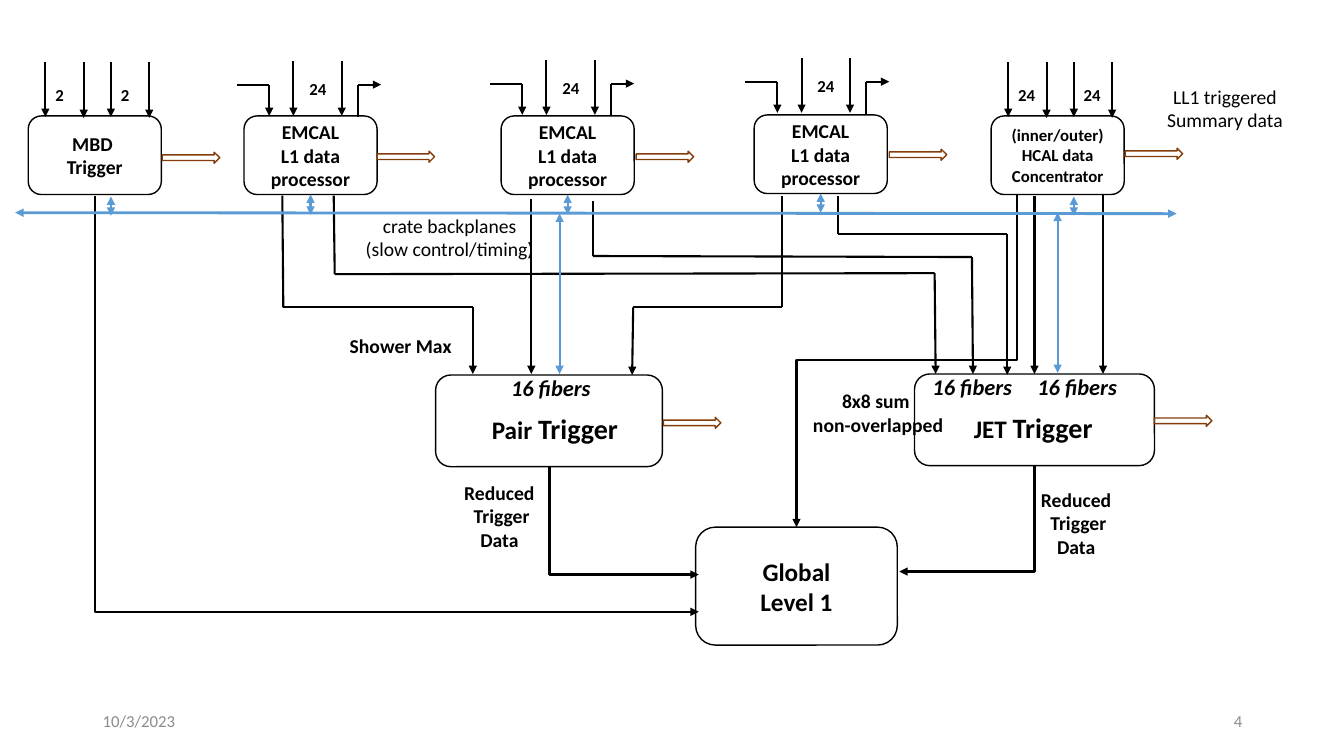
"""Build the trigger data-flow slide."""
from pptx import Presentation
from pptx import util as u
from pptx.dml import color
from pptx.enum import shapes, text
from pptx.oxml import ns, xmlchemy

COLORS = {"ink": "000000", "backplane": "5B9BD5", "output": "843C0B", "footer": "8C8C8C"}
ALIGN = {"left": text.PP_ALIGN.LEFT, "center": text.PP_ALIGN.CENTER, "right": text.PP_ALIGN.RIGHT}
BOX_SIZE = (1.32, 0.78)
EMCAL = ["EMCAL", "L1 data", "processor"]
REDUCED = ["Reduced ", "Trigger", "Data "]


def rgb(name):
    """Return a named colour."""
    return color.RGBColor.from_string(COLORS[name])


def write(shape, paragraphs, size, align="center", ink="ink", **values):
    """Write paragraphs, each a string or a list of (text, size) runs."""
    formats = {"name": "Calibri", "bold": True, **values}
    frame = shape.text_frame
    for index, content in enumerate(paragraphs):
        paragraph = frame.add_paragraph() if index else frame.paragraphs[0]
        paragraph.alignment = ALIGN[align]
        runs = [(content, size)] if isinstance(content, str) else content
        for words, points in runs:
            run = paragraph.add_run()
            run.text = words
            run.font.size = u.Pt(points)
            run.font.color.rgb = rgb(ink)
            for name, value in formats.items():
                setattr(run.font, name, value)


def add_outline(slide, kind, area, ink="ink"):
    """Add an unfilled preset shape."""
    shape = slide.shapes.add_shape(kind, *map(u.Inches, area))
    shape.shadow.inherit = False
    shape.fill.background()
    shape.line.color.rgb = rgb(ink)
    shape.line.width = u.Pt(1)
    return shape


def add_box(slide, area, paragraphs=(), size=14):
    """Add a rounded box with centred text."""
    box = add_outline(slide, shapes.MSO_SHAPE.ROUNDED_RECTANGLE, area)
    box.text_frame.word_wrap = True
    box.text_frame.vertical_anchor = text.MSO_ANCHOR.MIDDLE
    write(box, paragraphs, size)
    return box


def add_output(slide, left, top):
    """Add a hollow output arrow."""
    add_outline(slide, shapes.MSO_SHAPE.RIGHT_ARROW, (left, top, 0.57, 0.11), "output")


def add_label(slide, area, paragraphs, size=14, **values):
    """Add an unwrapped label."""
    label = slide.shapes.add_textbox(*map(u.Inches, area))
    label.text_frame.word_wrap = False
    label.text_frame.auto_size = text.MSO_AUTO_SIZE.SHAPE_TO_FIT_TEXT
    write(label, paragraphs, size, **values)


def add_footer(slide, left, words, align):
    """Add a grey footer text."""
    footer = slide.shapes.add_textbox(*map(u.Inches, (left, 6.95, 3, 0.4)))
    footer.text_frame.word_wrap = True
    footer.text_frame.vertical_anchor = text.MSO_ANCHOR.MIDDLE
    write(footer, [words], 12, align, "footer", bold=False)


def style_line(connector, ends="", ink="ink", width=1.5):
    """Format a connector and put triangles at the named ends."""
    connector.line.color.rgb = rgb(ink)
    connector.line.width = u.Pt(width)
    for end in ends.split():
        mark = xmlchemy.OxmlElement(f"a:{end}End")
        mark.set("type", "triangle")
        connector.line._get_or_add_ln().append(mark)
    connector.element.spPr.append(xmlchemy.OxmlElement("a:effectLst"))


def add_line(slide, points, ends="", ink="ink", width=1.5):
    """Add a straight line."""
    connector = slide.shapes.add_connector(
        shapes.MSO_CONNECTOR.STRAIGHT, *map(u.Inches, points))
    style_line(connector, ends, ink, width)
    return connector


def add_elbow(slide, points, preset="bentConnector2"):
    """Add an elbow arrow that first runs down, then sideways."""
    x1, y1, x2, y2 = points
    middle_x, middle_y = (x1 + x2) / 2, (y1 + y2) / 2
    half_width, half_height = abs(y2 - y1) / 2, abs(x2 - x1) / 2
    side = 1 if x2 > x1 else -1
    frame = (middle_x + side * half_width, middle_y - half_height,
             middle_x - side * half_width, middle_y + half_height)
    connector = slide.shapes.add_connector(shapes.MSO_CONNECTOR.ELBOW, *map(u.Inches, frame))
    properties = connector.element.spPr
    properties.find(ns.qn("a:xfrm")).set("rot", str((270 if side > 0 else 90) * 60000))
    properties.find(ns.qn("a:prstGeom")).set("prst", preset)
    style_line(connector, "tail")


def add_route(slide, *points):
    """Add straight segments through points, with an arrow at the last."""
    for index, (start, end) in enumerate(zip(points, points[1:])):
        add_line(slide, (*start, *end), "tail" if index == len(points) - 2 else "")


def add_emcal_inputs(slide, left, top):
    """Add the inputs and the neighbour links above a processor."""
    for offset in (0.49, 0.97):
        add_route(slide, (left + offset, top - 0.54), (left + offset, top))
    add_label(slide, (left + 0.55, top - 0.42, 0.37, 0.3), ["24"], 12, align="left")
    for link in ([(-0.07, -0.31), (0.25, -0.31), (0.25, 0)],
                 [(1.13, 0.01), (1.13, -0.31), (1.36, -0.31)]):
        add_route(slide, *((left + x, top + y) for x, y in link))


def add_input_pairs(slide, left, count, label_width):
    """Add two pairs of inputs with their counts."""
    for start in (left, left + 0.65):
        add_route(slide, (start, 0.62), (start, 1.16))
        add_route(slide, (start + 0.38, 0.62), (start + 0.38, 1.17))
        add_label(slide, (start, 0.79, label_width, 0.3), [count], 12, align="left")


def add_backplane(slide, processors):
    """Add the backplane line and its two-way links."""
    both = "head tail"
    add_line(slide, (0.15, 2.11, 11.67, 2.12), both, "backplane", 2)
    for processor, bottom in zip(processors, (2.13, 2.13, 2.11)):
        center = (processor.left + processor.width / 2) / u.Inches(1)
        link = add_line(slide, (center, bottom, center, 1.93), both, "backplane")
        link.end_connect(processor, 2)
    for x, start, end in ((1.1, 2.14, 1.95), (10.65, 2.14, 1.95),
                          (10.49, 2.11, 3.7), (5.55, 2.12, 3.71)):
        add_line(slide, (x, start, x, end), both, "backplane")


def main():
    """Build and save the slide."""
    presentation = Presentation()
    presentation.slide_width = u.Inches(13.33)
    presentation.slide_height = u.Inches(7.5)
    slide = presentation.slides.add_slide(presentation.slide_layouts[6])

    processors = [add_box(slide, (left, top, *BOX_SIZE), EMCAL)
                  for left, top in ((2.42, 1.15), (4.97, 1.15), (7.48, 1.14))]
    add_box(slide, (0.28, 1.15, *BOX_SIZE), ["MBD ", "Trigger"])
    add_box(slide, (9.83, 1.15, *BOX_SIZE), ["(inner/outer)", "HCAL data", "Concentrator"], 12)
    add_box(slide, (4.32, 3.72, 2.25, 0.91))
    jet = add_box(slide, (9.07, 3.71, 2.38, 0.91))
    add_box(slide, (6.9, 5.23, 2, 1.17), ["Global", "Level 1"], 18)

    for left, top in ((2.42, 1.15), (4.93, 1.14), (7.46, 1.12)):
        add_emcal_inputs(slide, left, top)
    add_input_pairs(slide, 0.45, "2", 0.29)
    add_input_pairs(slide, 10, "24", 0.37)

    for route in (
        [(3.31, 1.94), (3.32, 2.72), (9.27, 2.71), (9.28, 3.71)],
        [(5.88, 1.99), (5.88, 2.54), (9.64, 2.55), (9.65, 3.71)],
        [(8.31, 1.94), (8.31, 2.32), (9.99, 2.32), (9.99, 3.72)],
        [(2.8, 1.94), (2.81, 3.05), (4.69, 3.05), (4.69, 3.71)],
        [(7.76, 1.94), (7.76, 3.05), (6.28, 3.05), (6.27, 3.72)],
        [(5.27, 1.97), (5.27, 3.71)],
        [(10.94, 1.92), (10.94, 3.71)],
    ):
        add_route(slide, *route)
    add_line(slide, (10.26, 1.94, 10.26, 3.71), "tail").end_connect(jet, 0)
    for points in ((10.26, 4.62, 8.92, 5.67), (5.45, 4.63, 6.93, 5.7), (0.94, 1.94, 6.93, 6.07)):
        add_elbow(slide, points)
    add_elbow(slide, (10.09, 1.92, 7.9, 5.23), "bentConnector3")
    add_backplane(slide, processors)

    for left, top in ((1.61, 1.51), (3.74, 1.5), (6.31, 1.5), (8.82, 1.48),
                      (11.16, 1.47), (6.58, 4.14), (11.45, 4.12)):
        add_output(slide, left, top)

    for left, top in ((4.97, 3.66), (9.15, 3.65), (10.19, 3.65)):
        add_label(slide, (left, top, 1.01, 0.37), ["16 fibers"], 16, align="left", italic=True)
    for area, name in (((4.78, 4.03, 1.47, 0.44), "Pair "), ((9.56, 4.02, 1.39, 0.44), "JET ")):
        add_label(slide, area, [[(name, 18), ("Trigger", 20)]], align="left")
    add_label(slide, (3.37, 3.26, 1.22, 0.34), ["Shower Max"], align="left")
    add_label(slide, (7.96, 3.81, 1.5, 0.57), ["8x8 sum ", "non-overlapped"])
    for left, top in ((4.5, 4.72), (10.22, 4.79)):
        add_label(slide, (left, top, 0.95, 0.81), REDUCED)
    add_label(slide, (3.52, 2.07, 1.88, 0.57), ["crate backplanes", "(slow control/timing)"],
              bold=False)
    add_label(slide, (11.47, 0.79, 1.36, 0.57), ["LL1 triggered", "Summary data"], bold=False)
    add_footer(slide, 0.92, "10/3/2023", "left")
    add_footer(slide, 9.42, "4", "right")
    presentation.save("out.pptx")


if __name__ == "__main__":
    main()
